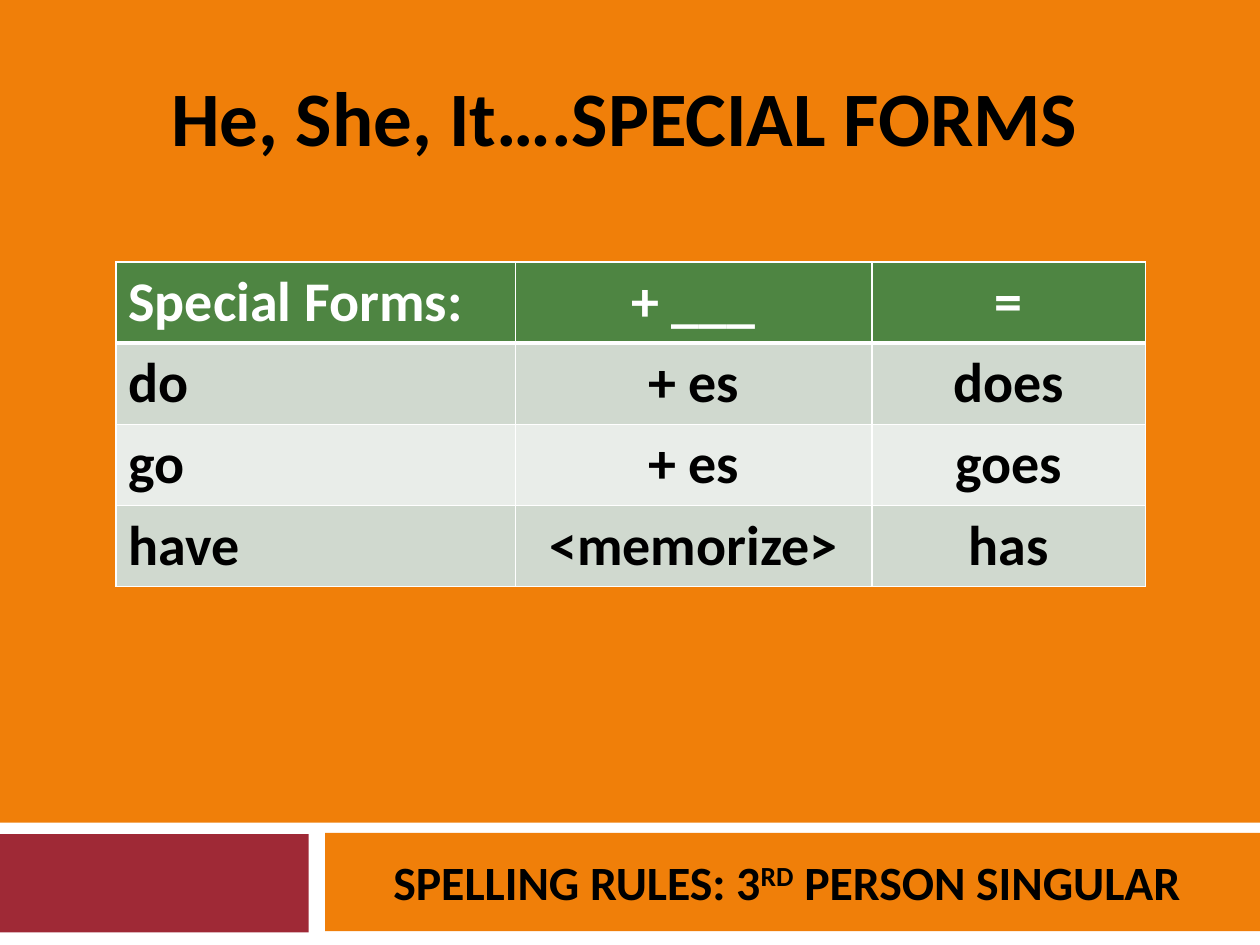
import pptx
import pptx.dml.color
import pptx.enum.shapes
import pptx.enum.text
import pptx.oxml
import pptx.oxml.ns
import pptx.util

Inches, Pt = pptx.util.Inches, pptx.util.Pt
ALIGN = pptx.enum.text.PP_ALIGN
ANCHOR = pptx.enum.text.MSO_ANCHOR

COLORS = {
    "orange": "F07F09", "red": "9F2936", "white": "FFFFFF", "black": "000000",
    "header": "4E8542", "odd": "D0D9CF", "even": "E9EDE9",
}
FONT = "Calibri"

TITLE = "He, She, It….SPECIAL FORMS"
FOOTER = [("SPELLING RULES: 3", False), ("RD", True), (" PERSON SINGULAR", False)]
ROWS = [
    ("Special Forms:", "+ ___", "="),
    ("do", "+ es", "does"),
    ("go", "+ es", "goes"),
    ("have", "<memorize>", "has"),
]
COL_WIDTHS = [3.17, 2.83, 2.17]
ROW_HEIGHT = 0.64
TABLE_LEFT, TABLE_TOP = 0.92, 2.08

# color, (left, top, width, height)
BARS = [
    ("white", (0, 6.53, 10, 0.97)),
    ("red", (-0.01, 6.62, 2.46, 0.78)),
    ("orange", (2.58, 6.61, 7.42, 0.78)),
]


def rgb(name):
    return pptx.dml.color.RGBColor.from_string(COLORS[name])


def paint(fill, name):
    fill.solid()
    fill.fore_color.rgb = rgb(name)


def style(p, size, color, align=ALIGN.CENTER):
    p.alignment = align
    for r in p.runs:
        r.font.name, r.font.size, r.font.bold = FONT, Pt(size), True
        r.font.color.rgb = rgb(color)


def place(sp, box, anchor):
    sp.left, sp.top, sp.width, sp.height = map(Inches, box)
    tf = sp.text_frame
    tf.word_wrap = True
    tf.auto_size = pptx.enum.text.MSO_AUTO_SIZE.NONE
    tf.vertical_anchor = anchor
    return tf


def add_borders(cell, widths):
    """Draw white cell edges; widths maps an edge letter to points."""
    tcPr = cell._tc.get_or_add_tcPr()
    for i, (edge, width) in enumerate(widths.items()):
        tcPr.insert(i, pptx.oxml.parse_xml(
            f'<a:ln{edge} {pptx.oxml.ns.nsdecls("a")} w="{Pt(width)}"><a:solidFill>'
            f'<a:srgbClr val="{COLORS["white"]}"/></a:solidFill></a:ln{edge}>'))


def add_bars(slide):
    for i, (color, box) in enumerate(BARS):
        sp = slide.shapes.add_shape(
            pptx.enum.shapes.MSO_SHAPE.RECTANGLE, *map(Inches, box))
        paint(sp.fill, color)
        sp.line.fill.background()
        sp.shadow.inherit = False
        # Bars belong behind the placeholders
        slide.shapes._spTree.insert(2 + i, sp._element)


def add_forms_table(slide):
    table = slide.shapes.add_table(
        len(ROWS), len(COL_WIDTHS), Inches(TABLE_LEFT), Inches(TABLE_TOP),
        Inches(sum(COL_WIDTHS)), Inches(ROW_HEIGHT * len(ROWS))).table
    for col, width in zip(table.columns, COL_WIDTHS):
        col.width = Inches(width)
    for i, row in enumerate(ROWS):
        table.rows[i].height = Inches(ROW_HEIGHT)
        fill = "header" if i == 0 else "odd" if i % 2 else "even"
        for j, text in enumerate(row):
            cell = table.cell(i, j)
            cell.text_frame.text = text
            style(cell.text_frame.paragraphs[0], 32,
                  "black" if i else "white", ALIGN.CENTER if j else ALIGN.LEFT)
            paint(cell.fill, fill)
            add_borders(cell, {"L": 1, "R": 1, "T": 3 if i == 1 else 1,
                               "B": 1 if i else 3})


def main():
    prs = pptx.Presentation()
    prs.slide_width, prs.slide_height = Inches(10), Inches(7.5)
    slide = prs.slides.add_slide(prs.slide_layouts[0])
    paint(slide.background.fill, "orange")
    add_bars(slide)
    add_forms_table(slide)

    title, footer = slide.placeholders
    tf = place(title, (0.92, 0.5, 8.08, 0.84), ANCHOR.TOP)
    tf.text = TITLE
    style(tf.paragraphs[0], 44, "black")

    tf = place(footer, (2.58, 6.62, 7.33, 0.75), ANCHOR.MIDDLE)
    p = tf.paragraphs[0]
    p.space_before = Pt(7)
    for text, raised in FOOTER:
        r = p.add_run()
        r.text = text
        if raised:
            r._r.get_or_add_rPr().set("baseline", "30000")
    style(p, 27.3, "black")
    prs.save("out.pptx")


if __name__ == "__main__":
    main()
